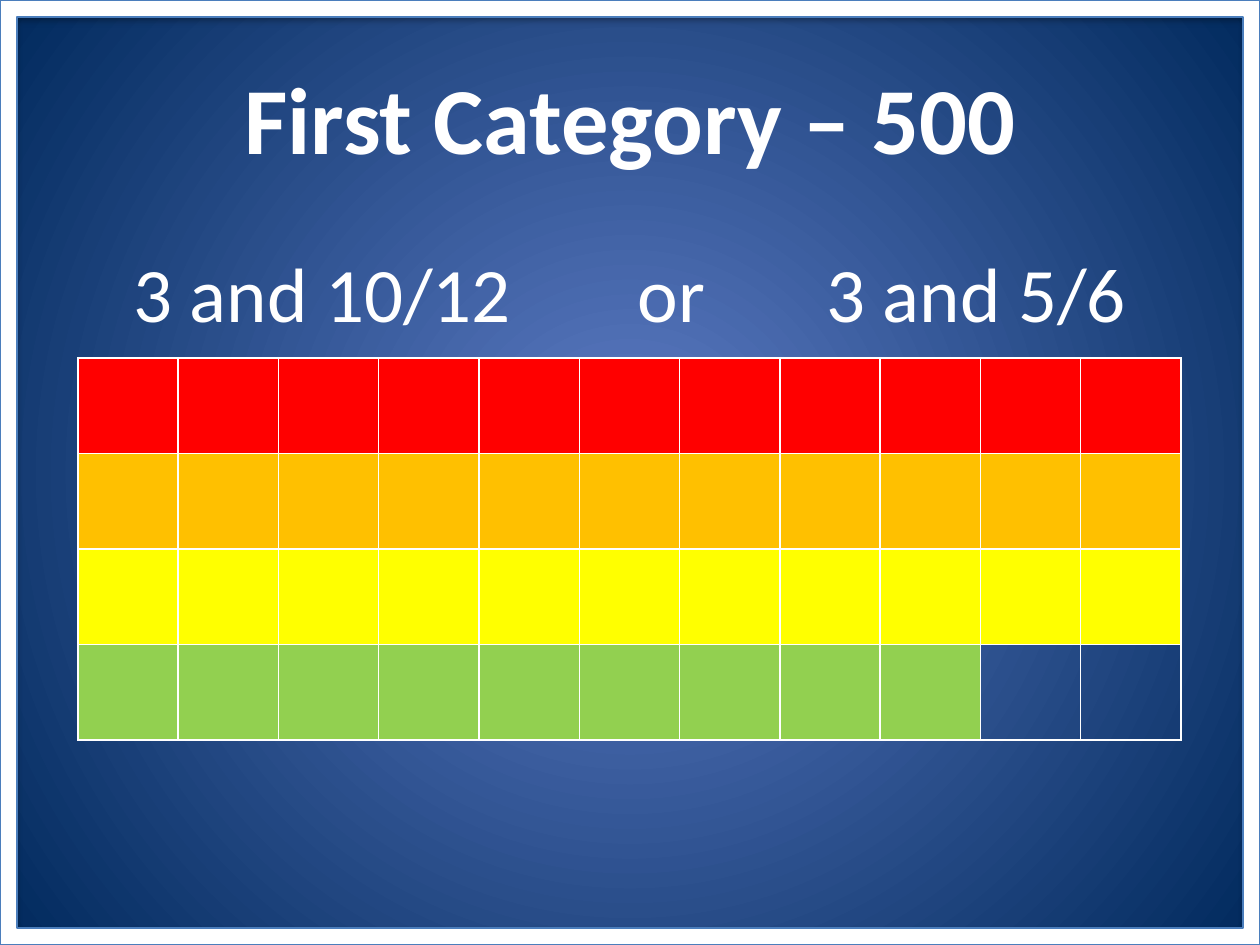
from lxml.etree import SubElement
from pptx import Presentation
from pptx.dml.color import RGBColor
from pptx.enum.shapes import MSO_SHAPE
from pptx.enum.text import MSO_ANCHOR, MSO_AUTO_SIZE, PP_ALIGN
from pptx.oxml.ns import qn
from pptx.util import Emu, Pt

PX_PER_INCH = 126
FONT = "Calibri"
COLORS = {
    "white": "FFFFFF",
    "glow": "5E7CC5",
    "navy": "00295C",
    "frame_line": "4B7EBC",
    "shadow": "000000",
    "red": "FF0000",
    "orange": "FFC000",
    "yellow": "FFFF00",
    "green": "92D050",
}
COLUMN_COUNT = 11
FILLED_CELLS = [("red", 11), ("orange", 11), ("yellow", 11), ("green", 9)]


def px(length):
    return Emu(round(length * 914400 / PX_PER_INCH))


def rgb(name):
    return RGBColor.from_string(COLORS[name])


def add_xml(parent, tag, **attributes):
    return SubElement(parent, qn(tag), attributes)


def add_color(parent, name):
    return add_xml(parent, "a:srgbClr", val=COLORS[name])


def paint_background(slide):
    fill = slide.background.fill
    fill.gradient()
    for stop, name in zip(fill.gradient_stops, ("glow", "navy")):
        stop.color.rgb = rgb(name)
    gradient = next(slide.element.iter(qn("a:gradFill")))
    gradient.remove(gradient.find(qn("a:lin")))
    circle = add_xml(gradient, "a:path", path="circle")
    add_xml(circle, "a:fillToRect", l="50000", t="50000", r="50000", b="50000")


def write_text(text_frame, text, size, bold=False):
    text_frame.text = text
    text_frame.word_wrap = True
    paragraph = text_frame.paragraphs[0]
    paragraph.alignment = PP_ALIGN.CENTER
    for run in paragraph.runs:
        run.font.name = FONT
        run.font.size = Pt(size)
        run.font.bold = bold
        run.font.color.rgb = rgb("white")


def place_title(slide, text):
    title = slide.shapes.title
    title.left, title.top = px(63), px(38)
    title.width, title.height = px(1134), px(157)
    write_text(title.text_frame, text, 54, bold=True)
    title.text_frame.vertical_anchor = MSO_ANCHOR.MIDDLE


def add_frame(slide, width, height):
    frame = slide.shapes.add_shape(MSO_SHAPE.FRAME, 0, 0, px(width), px(height))
    frame.adjustments[0] = 0.018
    frame.fill.solid()
    frame.fill.fore_color.rgb = rgb("white")
    frame.line.color.rgb = rgb("frame_line")
    frame.line.width = Pt(0.75)
    frame.shadow.inherit = False
    effects = next(frame.element.iter(qn("a:effectLst")))
    shadow = add_xml(
        effects, "a:outerShdw",
        blurRad=str(Pt(3.1)), dist=str(Pt(1.8)), dir="5400000", rotWithShape="0",
    )
    add_xml(add_color(shadow, "shadow"), "a:alpha", val="35000")


def add_answer(slide, text):
    box = slide.shapes.add_textbox(px(63), px(239), px(1134), px(106))
    write_text(box.text_frame, text, 44)
    box.text_frame.auto_size = MSO_AUTO_SIZE.SHAPE_TO_FIT_TEXT


def format_cell(cell, color):
    properties = cell._tc.get_or_add_tcPr()
    for side in ("a:lnL", "a:lnR", "a:lnT", "a:lnB"):
        border = add_xml(properties, side, w=str(Pt(1)))
        add_color(add_xml(border, "a:solidFill"), "white")
    if color:
        cell.fill.solid()
        cell.fill.fore_color.rgb = rgb(color)
    else:
        cell.fill.background()


def add_fraction_grid(slide):
    table = slide.shapes.add_table(
        len(FILLED_CELLS), COLUMN_COUNT, px(78), px(358), px(1103), px(382)
    ).table
    table.first_row = False
    table.horz_banding = False
    for row, (color, filled) in zip(table.rows, FILLED_CELLS):
        for index, cell in enumerate(row.cells):
            format_cell(cell, color if index < filled else None)


def main():
    width, height = 1260, 945
    presentation = Presentation()
    presentation.slide_width, presentation.slide_height = px(width), px(height)
    slide = presentation.slides.add_slide(presentation.slide_layouts[5])
    paint_background(slide)
    place_title(slide, "First Category – 500")
    add_frame(slide, width, height)
    add_answer(slide, "3 and 10/12\t\t\tor\t\t3 and 5/6")
    add_fraction_grid(slide)
    presentation.save("out.pptx")


if __name__ == "__main__":
    main()
